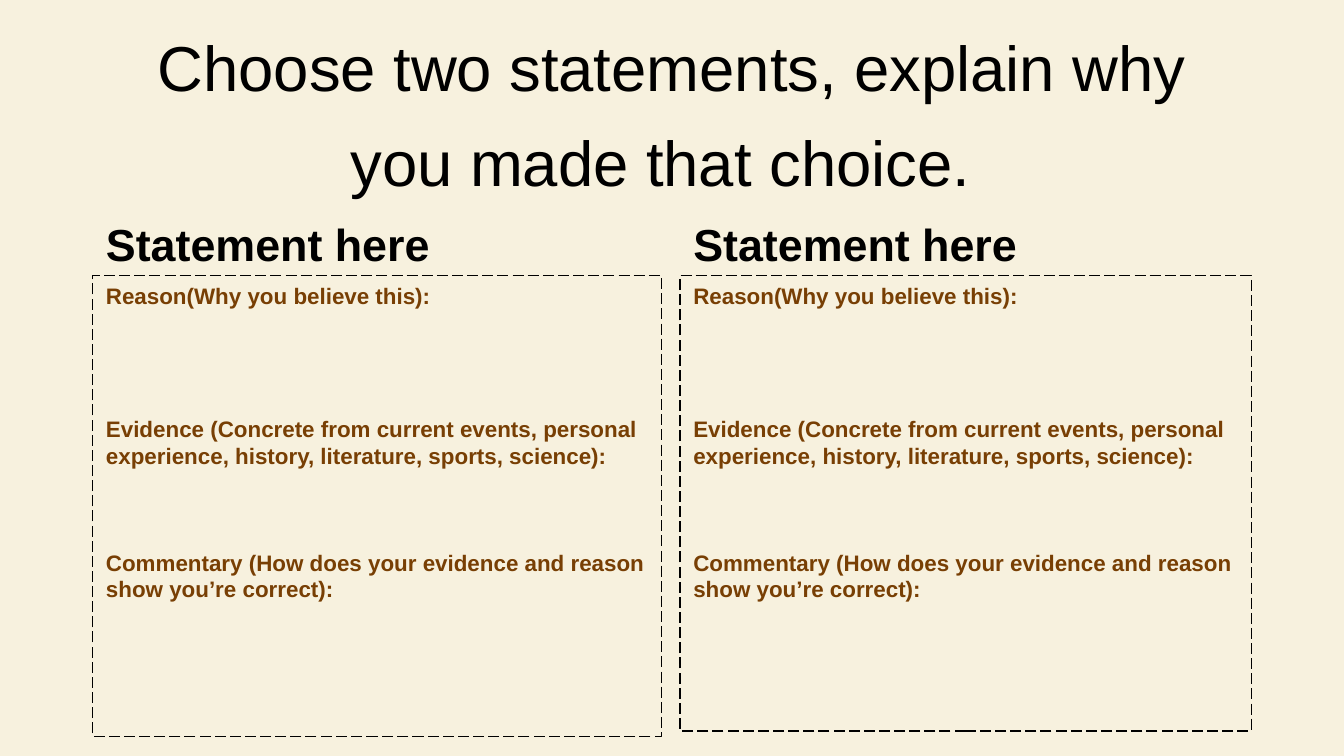
from pptx import Presentation
from pptx.dml.color import RGBColor
from pptx.enum.dml import MSO_LINE
from pptx.enum.shapes import MSO_SHAPE
from pptx.enum.text import MSO_ANCHOR, PP_ALIGN
from pptx.util import Pt

CREAM = RGBColor(0xF7, 0xF1, 0xDE)
BLACK = RGBColor(0, 0, 0)
BROWN = RGBColor(0x78, 0x3F, 0x04)
LEFT, CENTER = PP_ALIGN.LEFT, PP_ALIGN.CENTER
TOP, MIDDLE, BOTTOM = MSO_ANCHOR.TOP, MSO_ANCHOR.MIDDLE, MSO_ANCHOR.BOTTOM
RECTANGLE = MSO_SHAPE.RECTANGLE
LONG_DASH = MSO_LINE.LONG_DASH

PROMPT_LINE = 14.3
# Each prompt with the number of writing lines left free above it
PROMPTS = [
    ("Reason(Why you believe this):", 0),
    ("Evidence (Concrete from current events, personal experience, "
     "history, literature, sports, science):", 4),
    ("Commentary (How does your evidence and reason show you’re correct):", 3),
]
# Left, width and height of each answer box
COLUMNS = [(49.7, 304.6, 247), (364.3, 306, 244)]


class Worksheet:
    font_name = "Arial"

    def __init__(self, deck):
        self.page = deck.slides.add_slide(deck.slide_layouts[6])
        self.page.background.fill.solid()
        self.page.background.fill.fore_color.rgb = CREAM

    def prepare(self, box, anchor):
        """Wrap and anchor the text of a box, and return its frame."""
        frame = box.text_frame
        frame.word_wrap = True
        frame.vertical_anchor = anchor
        return frame

    def style(self, paragraph, size, color, bold=False, align=LEFT):
        font = paragraph.font
        font.name, font.size, font.bold = self.font_name, Pt(size), bold
        font.color.rgb = color
        paragraph.alignment = align

    def title(self, text, left, top, width, height):
        box = self.page.shapes.add_textbox(Pt(left), Pt(top), Pt(width), Pt(height))
        frame = self.prepare(box, MIDDLE)
        frame.margin_bottom = Pt(13.6)
        paragraph = frame.paragraphs[0]
        paragraph.add_run().text = text
        self.style(paragraph, 34, BLACK, align=CENTER)
        paragraph.line_spacing = Pt(53)
        tail = paragraph.add_run()
        tail.text = " "
        tail.font.size = Pt(44)

    def heading(self, text, left, top, width, height):
        box = self.page.shapes.add_textbox(Pt(left), Pt(top), Pt(width), Pt(height))
        frame = self.prepare(box, BOTTOM)
        frame.text = text
        self.style(frame.paragraphs[0], 24, BLACK, bold=True)

    def answer_box(self, prompts, left, top, width, height):
        box = self.page.shapes.add_shape(
            RECTANGLE, Pt(left), Pt(top), Pt(width), Pt(height))
        box.shadow.inherit = False
        box.fill.background()
        box.line.color.rgb = BLACK
        box.line.width = Pt(0.75)
        box.line.dash_style = LONG_DASH
        frame = self.prepare(box, TOP)
        frame.text = "\n".join(text for text, _ in prompts)
        for paragraph, (_, free_lines) in zip(frame.paragraphs, prompts):
            self.style(paragraph, 12, BROWN, bold=True)
            paragraph.line_spacing = Pt(PROMPT_LINE)
            if free_lines:
                paragraph.space_before = Pt(free_lines * PROMPT_LINE)


def main():
    deck = Presentation()
    deck.slide_width, deck.slide_height = Pt(720), Pt(405)
    sheet = Worksheet(deck)
    sheet.title("Choose two statements, explain why you made that choice.",
                49.7, 21.6, 620.6, 78.5)
    for left, width, height in COLUMNS:
        sheet.heading("Statement here", left, 99.4, width, 49)
        sheet.answer_box(PROMPTS, left, 147.6, width, height)
    deck.save("out.pptx")


if __name__ == "__main__":
    main()
